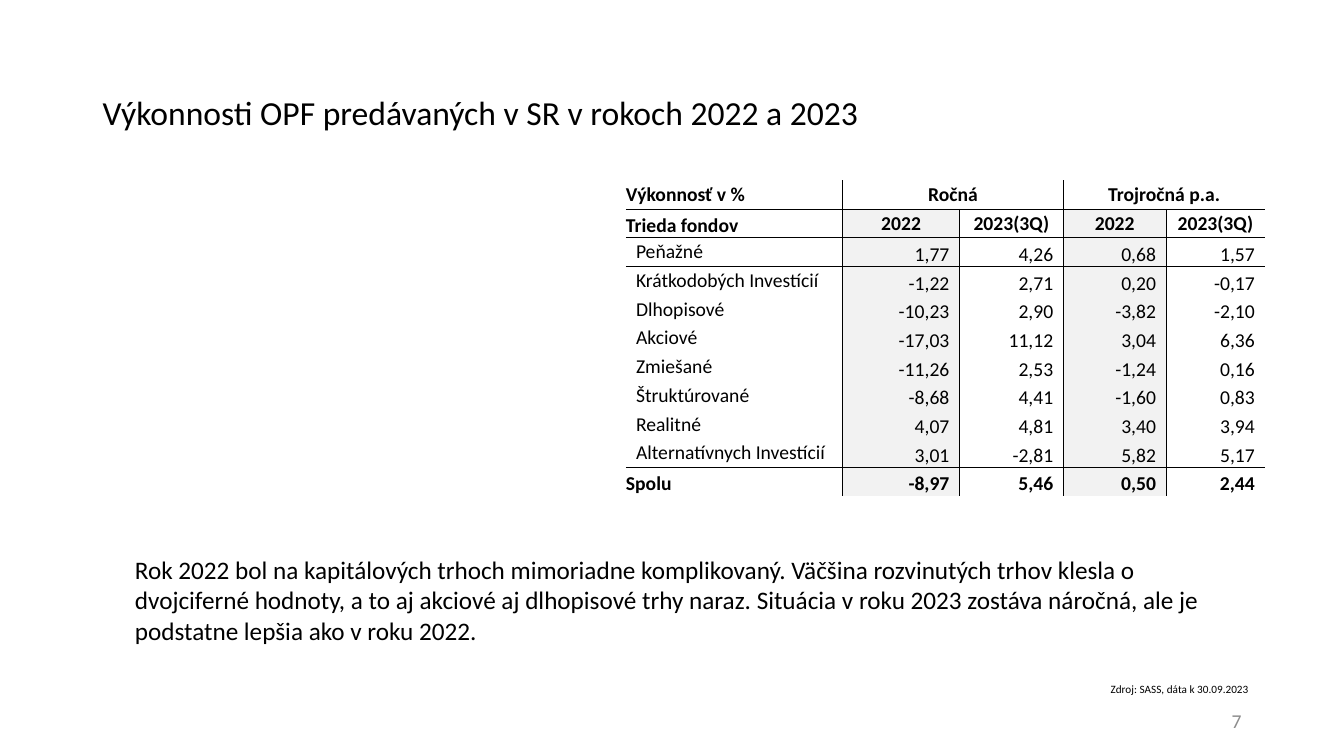
"""Builds the slide on yearly and three-year fund returns."""
import pptx
import pptx.dml.color
import pptx.enum.text
import pptx.oxml
import pptx.oxml.ns
import pptx.util

Pt = pptx.util.Pt
ALIGN = pptx.enum.text.PP_ALIGN
ANCHOR = pptx.enum.text.MSO_ANCHOR
HUES = {"ink": "000000", "gray": "8C8C8C", "band": "F2F2F2"}
PLAIN = "{2D5ABB26-0587-4C30-8999-92F81FD0307C}"
COLS = [154.8, 83.5, 74.2, 73.4, 70.6]
HIGH = 20.5
ROWS = [
    ["Výkonnosť v %", "Ročná", "", "Trojročná p.a.", ""],
    ["Trieda fondov", "2022", "2023(3Q)", "2022", "2023(3Q)"],
    ["Peňažné", "1,77", "4,26", "0,68", "1,57"],
    ["Krátkodobých Investícií", "-1,22", "2,71", "0,20", "-0,17"],
    ["Dlhopisové", "-10,23", "2,90", "-3,82", "-2,10"],
    ["Akciové", "-17,03", "11,12", "3,04", "6,36"],
    ["Zmiešané", "-11,26", "2,53", "-1,24", "0,16"],
    ["Štruktúrované", "-8,68", "4,41", "-1,60", "0,83"],
    ["Realitné", "4,07", "4,81", "3,40", "3,94"],
    ["Alternatívnych Investícií", "3,01", "-2,81", "5,82", "5,17"],
    ["Spolu", "-8,97", "5,46", "0,50", "2,44"],
]
RULES = {0: 0.5, 1: 1, 9: 1}


class Deck:
    def __init__(self):
        self.file = pptx.Presentation()
        self.file.slide_width, self.file.slide_height = Pt(960), Pt(540)
        self.slide = self.file.slides.add_slide(self.file.slide_layouts[6])

    def style(self, item, form):
        for key, val in form.items():
            setattr(item, key, val)

    def label(self, frame, text, size, hue="ink", bold=False, **form):
        par = frame.paragraphs[0]
        run = par.add_run()
        run.text = text
        self.style(par, form)
        self.style(run.font, {"name": "Calibri", "size": Pt(size), "bold": bold})
        run.font.color.rgb = pptx.dml.color.RGBColor.from_string(HUES[hue])

    def text(self, box, text, size, anchor=ANCHOR.TOP, **form):
        frame = self.slide.shapes.add_textbox(*map(Pt, box)).text_frame
        self.style(frame, {"word_wrap": True, "vertical_anchor": anchor})
        self.label(frame, text, size, **form)

    def edge(self, cell, side, width):
        space = pptx.oxml.ns.nsdecls("a")
        fill = f'<a:solidFill><a:srgbClr val="{HUES["ink"]}"/></a:solidFill>'
        line = f'<a:ln{side} {space} w="{Pt(width)}">{fill}</a:ln{side}>'
        cell._tc.get_or_add_tcPr().append(pptx.oxml.parse_xml(line))

    def cell(self, cell, row, col, text):
        head, total = row < 2, row == len(ROWS) - 1
        if col in (1, 3):
            self.edge(cell, "L", 0.5)
        if col + cell.span_width - 1 in (0, 2):
            self.edge(cell, "R", 0.5)
        if row - 1 in RULES:
            self.edge(cell, "T", RULES[row - 1])
        if row in RULES:
            self.edge(cell, "B", RULES[row])
        if row and col in (1, 3):
            cell.fill.solid()
            cell.fill.fore_color.rgb = pptx.dml.color.RGBColor.from_string(HUES["band"])
        else:
            cell.fill.background()
        if col == 0:
            align, low = ALIGN.LEFT, row == 1 or total
        else:
            align, low = (ALIGN.CENTER if head else ALIGN.RIGHT), not head
        self.style(cell, {
            "margin_left": Pt(0 if col or head or total else 7.2),
            "margin_right": Pt(7.2 if col and not head else 0),
            "margin_top": 0,
            "margin_bottom": 0,
            "vertical_anchor": ANCHOR.BOTTOM if low else ANCHOR.MIDDLE,
        })
        if text:
            self.label(cell.text_frame, text, 14, bold=head or total, alignment=align)

    def table(self, left, top):
        size = Pt(sum(COLS)), Pt(HIGH * len(ROWS))
        shape = self.slide.shapes.add_table(len(ROWS), len(COLS), Pt(left), Pt(top), *size)
        table = shape.table
        self.style(table, {"first_row": False, "horz_banding": False})
        table._tbl.tblPr.find(pptx.oxml.ns.qn("a:tableStyleId")).text = PLAIN
        for col, width in zip(table.columns, COLS):
            col.width = Pt(width)
        for col in (1, 3):
            table.cell(0, col).merge(table.cell(0, col + 1))
        for row, texts in enumerate(ROWS):
            table.rows[row].height = Pt(HIGH)
            for col, text in enumerate(texts):
                self.cell(table.cell(row, col), row, col, text)


def main():
    deck = Deck()
    deck.text((66.24, 29.5, 828, 104.4), "Výkonnosti OPF predávaných v SR v rokoch 2022 a 2023",
              24, ANCHOR.MIDDLE, line_spacing=0.9)
    deck.text((678, 500.5, 216, 28.8), "7", 14, ANCHOR.MIDDLE, hue="gray", alignment=ALIGN.RIGHT)
    deck.text((786.24, 483.84, 116.6, 17.3), "Zdroj: SASS, dáta k 30.09.2023", 8)
    deck.text((89.3, 392.4, 813.6, 72.7),
              "Rok 2022 bol na kapitálových trhoch mimoriadne komplikovaný. "
              "Väčšina rozvinutých trhov klesla o dvojciferné hodnoty, a to aj akciové "
              "aj dlhopisové trhy naraz. Situácia v roku 2023 zostáva náročná, "
              "ale je podstatne lepšia ako v roku 2022.", 18)
    deck.table(447.1, 128.9)
    deck.file.save("out.pptx")


if __name__ == "__main__":
    main()
